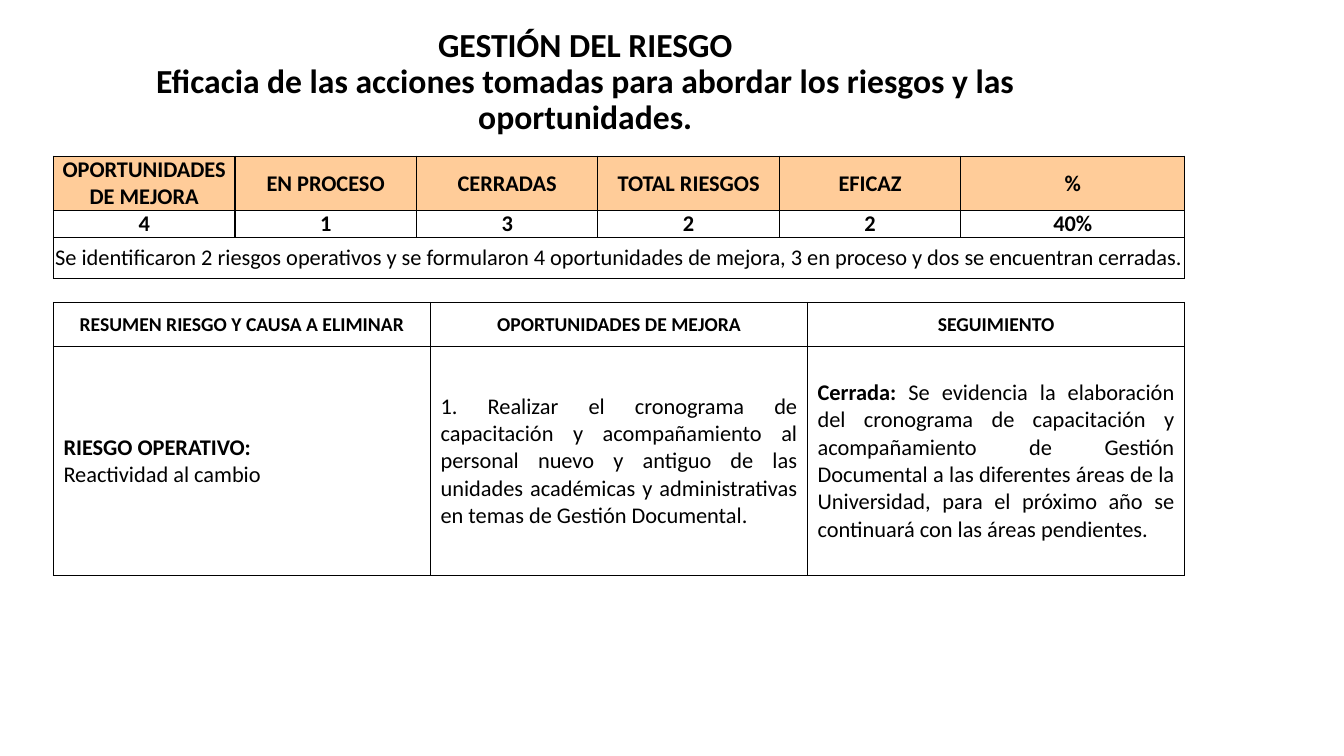
from lxml.etree import SubElement
from pptx import Presentation
from pptx.dml.color import RGBColor
from pptx.enum.text import MSO_ANCHOR as ANCHOR, PP_ALIGN as ALIGN
from pptx.oxml.ns import qn
from pptx.util import Inches, Pt

BLACK = RGBColor(0x00, 0x00, 0x00)
WHITE = RGBColor(0xFF, 0xFF, 0xFF)
PEACH = RGBColor(0xFF, 0xCC, 0x99)
FONT = "Calibri"

TABLE_LEFT, TABLE_WIDTH = 0.53, 11.22
NARROW_COL = 1.8
SUMMARY_COLS = [NARROW_COL] * 5 + [TABLE_WIDTH - 5 * NARROW_COL]
SUMMARY_ROWS = [0.54, 0.27, 0.4]
DETAIL_COLS = [TABLE_WIDTH / 3] * 3
DETAIL_ROWS = [0.44, 2.27]

TITLE = ("GESTIÓN DEL RIESGO\vEficacia de las acciones tomadas para abordar "
         "los riesgos y las oportunidades.")
SUMMARY = [
    ["OPORTUNIDADES DE MEJORA", "EN PROCESO", "CERRADAS", "TOTAL RIESGOS", "EFICAZ", "%"],
    ["4", "1", "3", "2", "2", "40%"],
]
SUMMARY_NOTE = ("Se identificaron 2 riesgos operativos y se formularon 4 oportunidades "
                "de mejora, 3 en proceso y dos se encuentran cerradas.")
DETAIL_HEADERS = ["RESUMEN RIESGO Y CAUSA A ELIMINAR", "OPORTUNIDADES DE MEJORA", "SEGUIMIENTO"]
# Each cell is a list of paragraphs, each paragraph a list of (text, bold) runs.
DETAIL_BODY = [
    [[("RIESGO OPERATIVO:", True)], [("Reactividad al cambio", False)]],
    [[("1. Realizar el cronograma de capacitación y acompañamiento al personal nuevo "
       "y antiguo de las unidades académicas y administrativas en temas de Gestión "
       "Documental.", False)]],
    [[("Cerrada: ", True),
      ("Se evidencia la elaboración del cronograma de capacitación y acompañamiento de "
       "Gestión Documental a las diferentes áreas de la Universidad, para el próximo año "
       "se continuará con las áreas pendientes.", False)]],
]


def style_run(r, size, bold):
    r.font.name = FONT
    r.font.size = Pt(size)
    r.font.bold = bold
    r.font.color.rgb = BLACK


def add_title(slide):
    box = slide.shapes.add_textbox(Inches(0.42), Inches(0.7), Inches(10.77), Inches(0.71))
    tf = box.text_frame
    tf.word_wrap = True
    tf.vertical_anchor = ANCHOR.BOTTOM
    p = tf.paragraphs[0]
    p.text = TITLE
    p.alignment = ALIGN.CENTER
    p.line_spacing = 0.9
    for r in p.runs:
        style_run(r, 24, True)


def set_borders(cell):
    tc_pr = cell._tc.get_or_add_tcPr()
    for side in ("lnL", "lnR", "lnT", "lnB"):
        ln = SubElement(tc_pr, qn(f"a:{side}"), w=str(Pt(1)))
        fill = SubElement(ln, qn("a:solidFill"))
        SubElement(fill, qn("a:srgbClr"), val=str(BLACK))


def add_grid(slide, top, cols, rows):
    """Add a plain bordered table with the given column widths and row heights."""
    frame = slide.shapes.add_table(len(rows), len(cols), Inches(TABLE_LEFT), Inches(top),
                                   Inches(sum(cols)), Inches(sum(rows)))
    table = frame.table
    table.first_row = table.horz_banding = False
    for col, width in zip(table.columns, cols):
        col.width = Inches(width)
    for row, height in zip(table.rows, rows):
        row.height = Inches(height)
    for cell in table.iter_cells():
        set_borders(cell)
        cell.fill.solid()
        cell.fill.fore_color.rgb = WHITE
        cell.vertical_anchor = ANCHOR.MIDDLE
    return table


def fill_cell(cell, paragraphs, size, align):
    tf = cell.text_frame
    for i, runs in enumerate(paragraphs):
        p = tf.add_paragraph() if i else tf.paragraphs[0]
        p.alignment = align
        for text, bold in runs:
            r = p.add_run()
            r.text = text
            style_run(r, size, bold)


def fill_tight_cell(cell, text, size, bold=True):
    """Write one centred line of text in a cell without margins."""
    cell.margin_left = cell.margin_right = cell.margin_top = cell.margin_bottom = 0
    fill_cell(cell, [[(text, bold)]], size, ALIGN.CENTER)


def add_summary_table(slide):
    table = add_grid(slide, 1.55, SUMMARY_COLS, SUMMARY_ROWS)
    for i, values in enumerate(SUMMARY):
        for j, value in enumerate(values):
            fill_tight_cell(table.cell(i, j), value, 16)
    for j in range(len(SUMMARY_COLS)):
        table.cell(0, j).fill.fore_color.rgb = PEACH
    note = table.cell(2, 0)
    note.merge(table.cell(2, len(SUMMARY_COLS) - 1))
    fill_tight_cell(note, SUMMARY_NOTE, 16, bold=False)


def add_detail_table(slide):
    table = add_grid(slide, 3, DETAIL_COLS, DETAIL_ROWS)
    for j, (header, body) in enumerate(zip(DETAIL_HEADERS, DETAIL_BODY)):
        fill_tight_cell(table.cell(0, j), header, 14)
        fill_cell(table.cell(1, j), body, 16, ALIGN.JUSTIFY)


def main():
    prs = Presentation()
    prs.slide_width, prs.slide_height = Inches(13.33), Inches(7.5)
    slide = prs.slides.add_slide(prs.slide_layouts[6])
    add_title(slide)
    add_detail_table(slide)
    add_summary_table(slide)
    prs.save("out.pptx")


if __name__ == "__main__":
    main()
